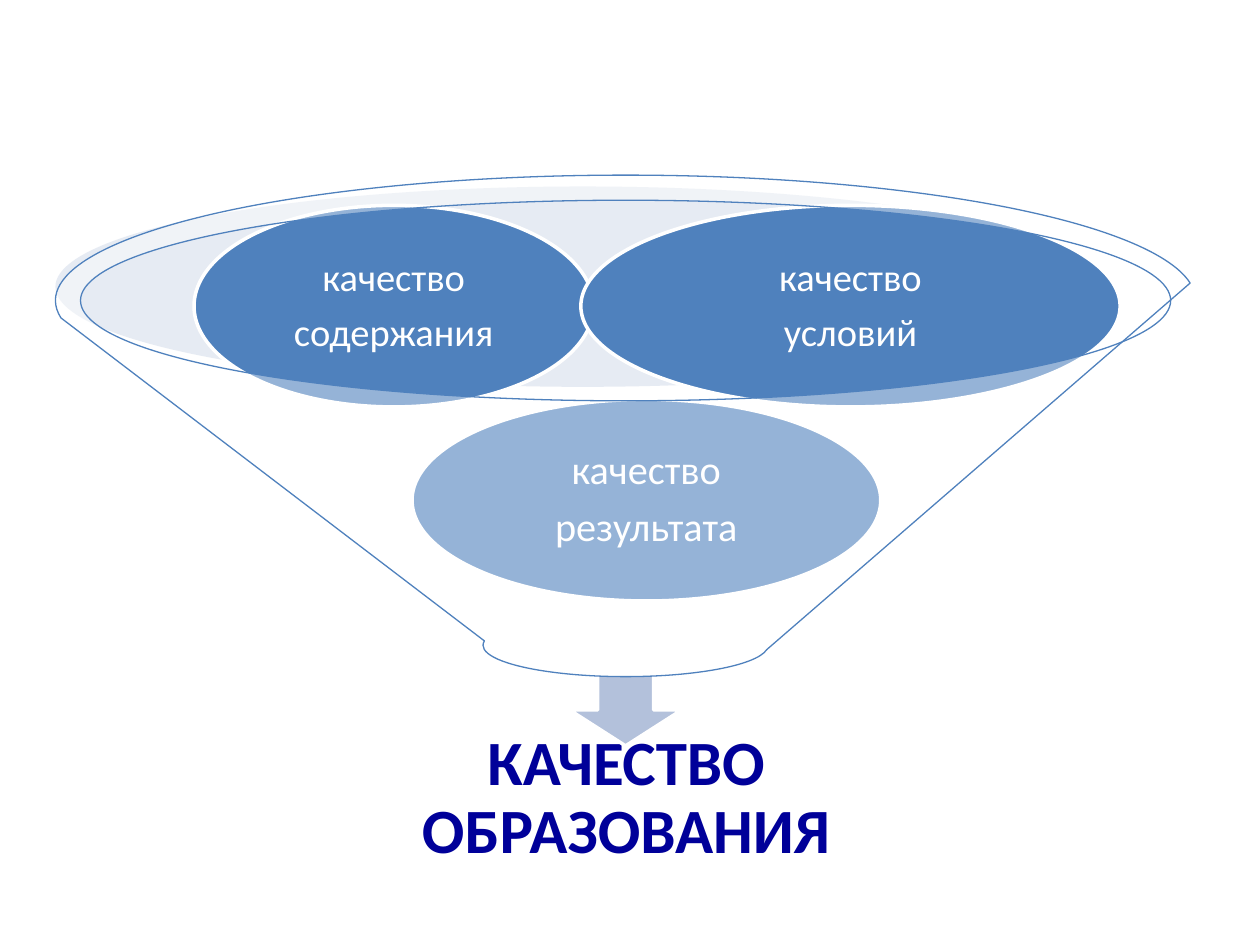
from lxml import etree
from pptx import Presentation
from pptx.dml.color import RGBColor
from pptx.enum.shapes import MSO_SHAPE as SHP
from pptx.enum.text import MSO_ANCHOR, MSO_AUTO_SIZE, PP_ALIGN
from pptx.oxml.ns import qn
from pptx.util import Inches, Pt

COLORS = {
    "blue": "4F81BD",
    "rim": "C2CDE1",
    "arrow": "B3C1DB",
    "white": "FFFFFF",
    "navy": "000099",
}


def rgb(name):
    return RGBColor.from_string(COLORS[name])


def place(sp, box):
    sp.left, sp.top, sp.width, sp.height = (Inches(v) for v in box)


def add_shape(slide, kind, box, fill, line=None, width=2, alpha=None):
    sp = slide.shapes.add_shape(kind, *(Inches(v) for v in box))
    sp.shadow.inherit = False
    sp.fill.solid()
    sp.fill.fore_color.rgb = rgb(fill)
    if alpha is not None:
        clr = sp.fill._xPr.find(".//" + qn("a:srgbClr"))
        etree.SubElement(clr, qn("a:alpha")).set("val", str(alpha * 1000))
    if line:
        sp.line.color.rgb = rgb(line)
        sp.line.width = Pt(width)
    else:
        sp.line.fill.background()
    return sp


def write(sp, *lines, size, color, bold=False, inset=0.03):
    tf = sp.text_frame
    tf.word_wrap = True
    tf.auto_size = MSO_AUTO_SIZE.NONE
    tf.vertical_anchor = MSO_ANCHOR.MIDDLE
    tf.margin_left = tf.margin_right = Inches(inset)
    tf.margin_top = tf.margin_bottom = Inches(inset)
    for i, text in enumerate(lines):
        p = tf.add_paragraph() if i else tf.paragraphs[0]
        p.alignment = PP_ALIGN.CENTER
        p.line_spacing = 0.9
        p.space_before = Pt(0)
        p.space_after = Pt(round(size * 0.35, 1))
        r = p.add_run()
        r.text = text
        r.font.name = "Calibri"
        r.font.size = Pt(size)
        r.font.bold = bold
        r.font.color.rgb = rgb(color)


def add_funnel(slide, box):
    x, y, w, h = box
    add_shape(slide, SHP.OVAL, (x, y + 0.09, 8.37, 1.59), "rim", alpha=40)
    add_shape(slide, SHP.DOWN_ARROW, (x + 4.08, y + 3.96, 0.89, 0.57), "arrow", "white")
    ovals = [
        (2.83, 1.78, 3.72, "результата", 23),
        (1.1, 0.24, 3.17, "содержания", 22),
        (4.17, 0.24, 4.28, "условий", 22),
    ]
    for dx, dy, width, word, size in ovals:
        sp = add_shape(slide, SHP.OVAL, (x + dx, y + dy, width, 1.6), "blue", "white")
        write(sp, "качество", word, size=size, color="white")
    add_shape(slide, SHP.FUNNEL, box, "white", "blue", width=0.75, alpha=40)


def add_result(slide, box):
    title = slide.shapes.title
    place(title, box)
    write(title, "КАЧЕСТВО ОБРАЗОВАНИЯ", size=36, color="navy", bold=True, inset=0.28)


def main():
    prs = Presentation()
    prs.slide_width, prs.slide_height = Inches(10), Inches(7.5)
    slide = prs.slides.add_slide(prs.slide_layouts[5])
    add_funnel(slide, (0.44, 1.39, 9.05, 3.98))
    add_result(slide, (2.84, 5.81, 4.26, 1.06))
    prs.save("out.pptx")


if __name__ == "__main__":
    main()
